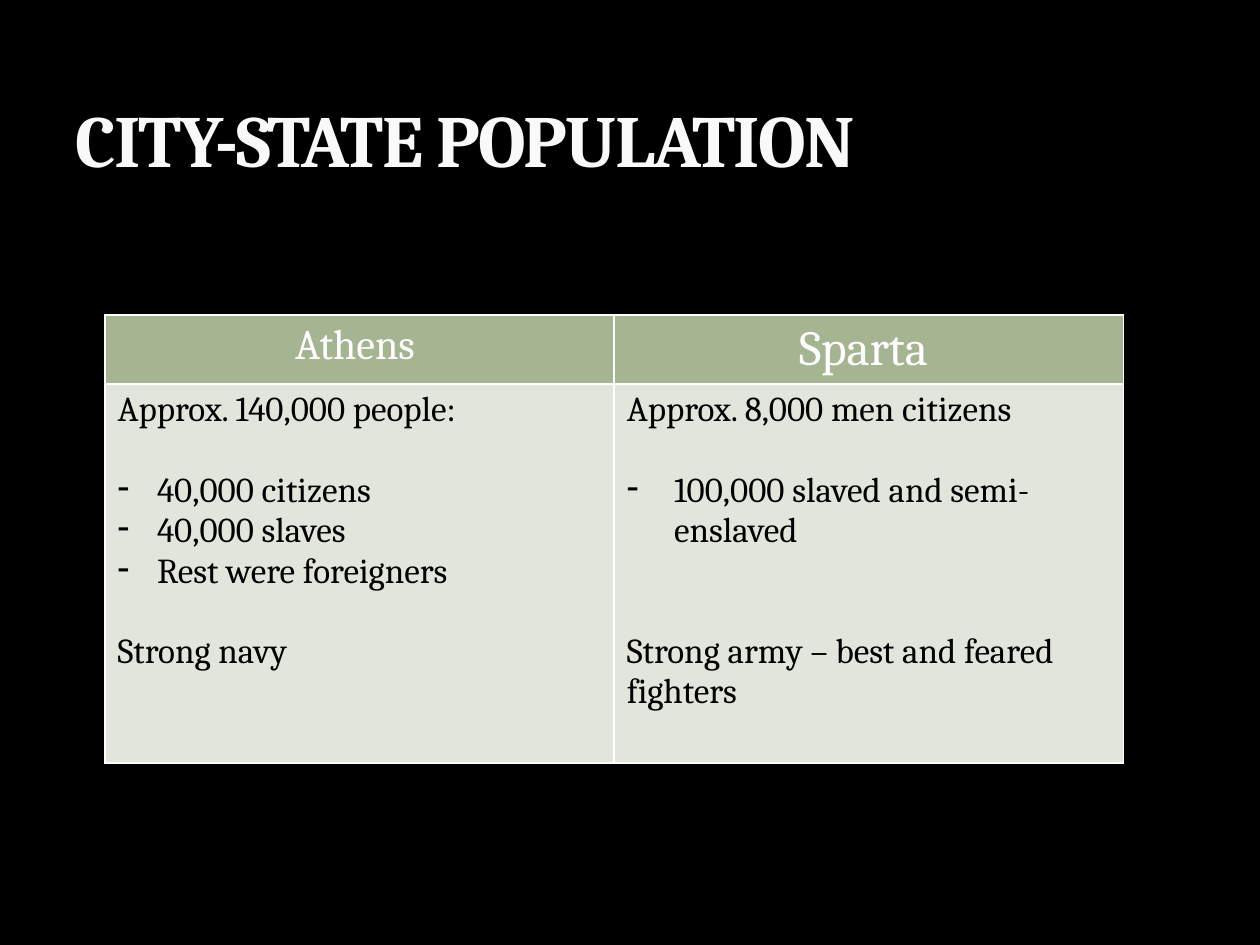
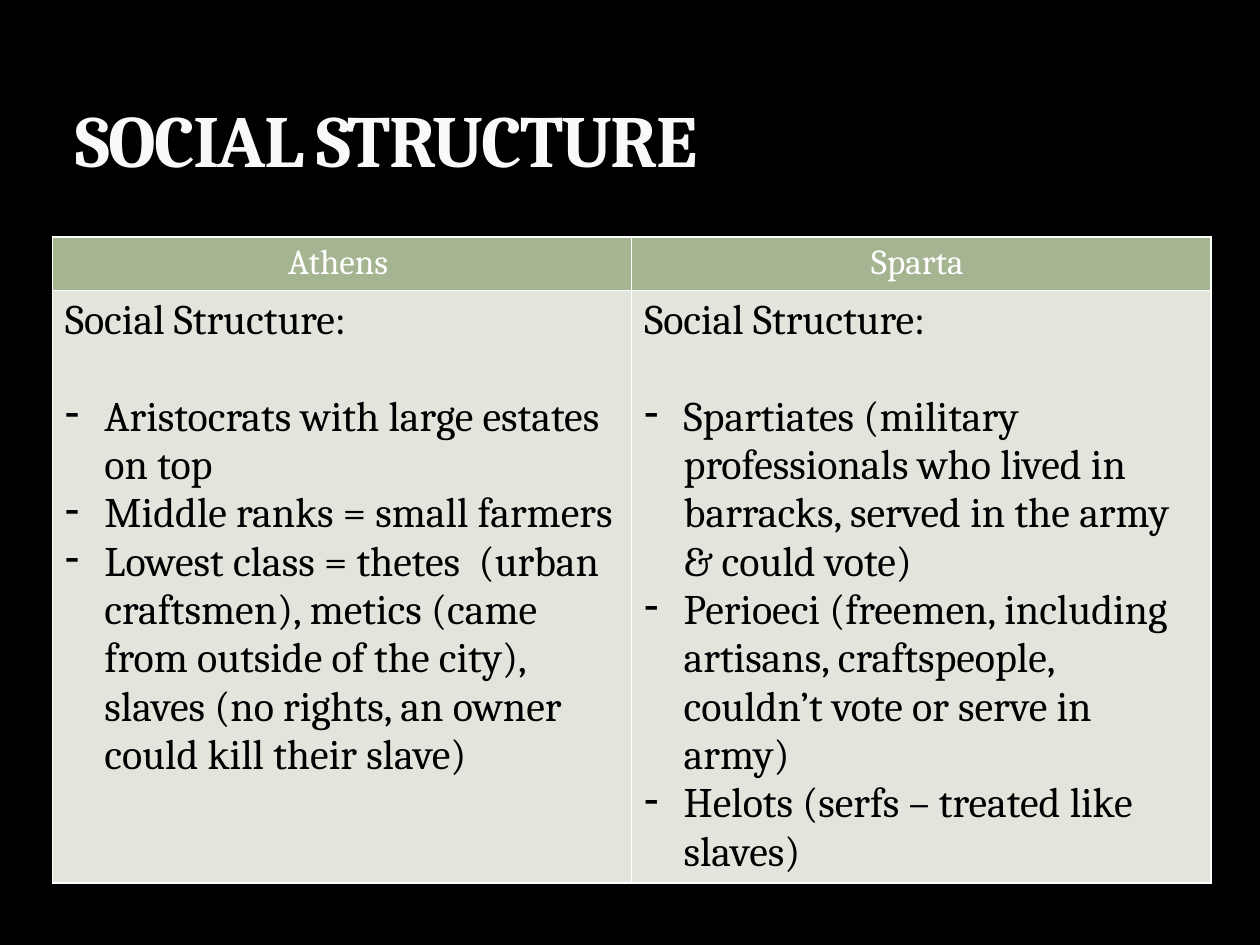
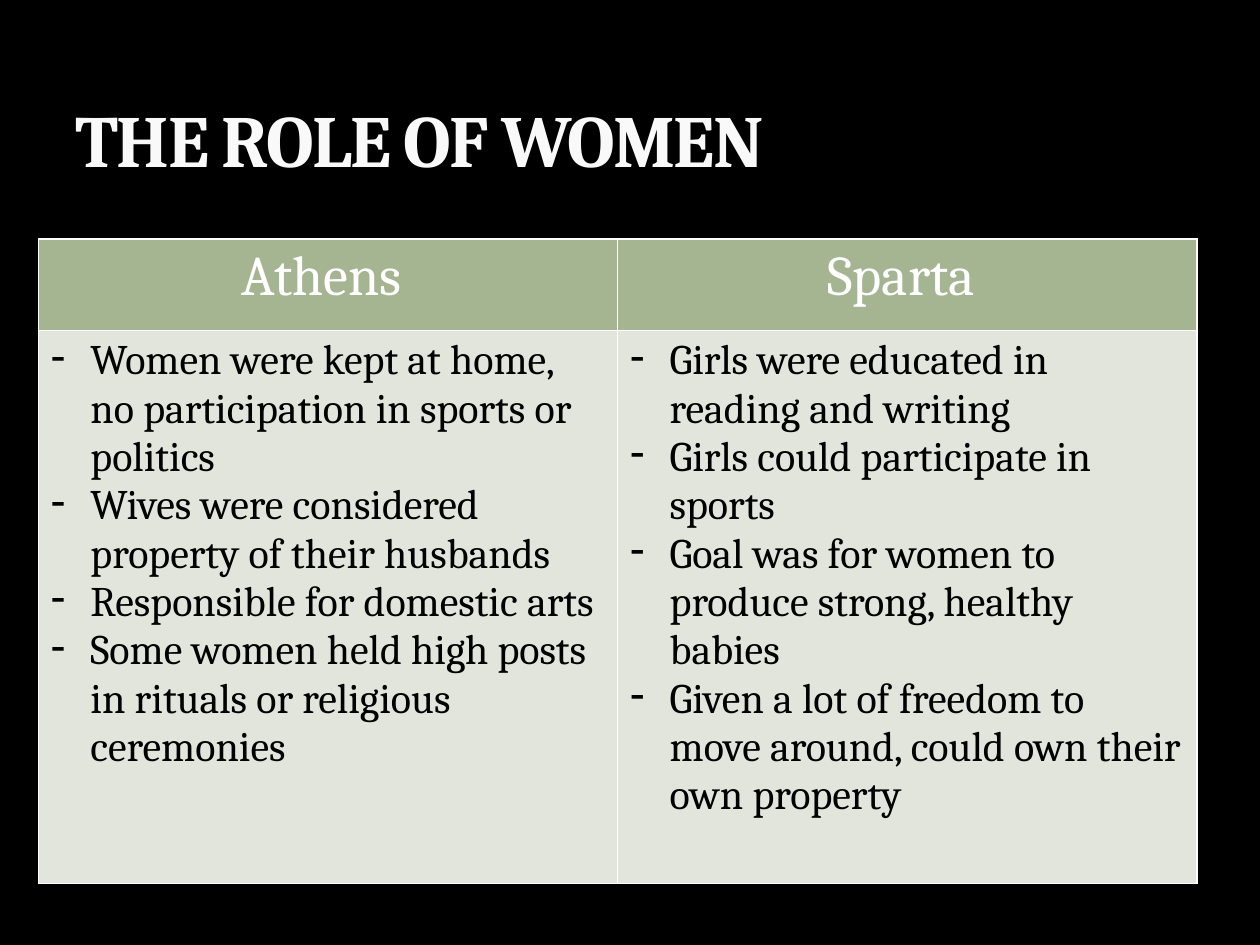
from dataclasses import dataclass

from lxml import etree
from pptx import Presentation
from pptx.dml.color import RGBColor
from pptx.enum.text import MSO_ANCHOR, MSO_AUTO_SIZE, PP_ALIGN
from pptx.oxml.ns import qn
from pptx.util import Pt

LEFT = PP_ALIGN.LEFT
CENTER = PP_ALIGN.CENTER
BOTTOM = MSO_ANCHOR.BOTTOM
FIXED = MSO_AUTO_SIZE.NONE
TITLE_ONLY = 5


@dataclass(frozen=True)
class Theme:
    font: str = "Cambria"
    back: str = "000000"
    title: str = "F9F9F9"
    edge: str = "3C4422"
    head: str = "A5B592"
    body: str = "E1E5DC"
    light: str = "FFFFFF"
    dark: str = "000000"
    title_size: int = 42
    small: int = 20
    mid: int = 24
    large: int = 28
    huge: int = 32
    leading: float = 1.15


@dataclass(frozen=True)
class Line:
    text: str
    indent: float = 0
    gap: int = 0


def bullet(text, gap=0, indent=22.5):
    return Line(text, indent, gap)


def add_line(parent, tag, width, color, alpha=100):
    line = etree.SubElement(parent, qn(tag), w=str(Pt(width)))
    fill = etree.SubElement(line, qn("a:solidFill"))
    tint = etree.SubElement(fill, qn("a:srgbClr"), val=color)
    if alpha < 100:
        etree.SubElement(tint, qn("a:alpha"), val=str(alpha * 1000))
    return line


class Deck:
    def __init__(self, theme):
        self.theme = theme
        self.show = Presentation()
        self.show.slide_width = Pt(720)
        self.show.slide_height = Pt(540)
        fill = self.show.slide_master.background.fill
        fill.solid()
        fill.fore_color.rgb = RGBColor.from_string(theme.back)
        self.slide = None

    def style(self, par, size, color, bold=False):
        for run in par.runs:
            run.font.name = self.theme.font
            run.font.size = Pt(size)
            run.font.bold = bold
            run.font.color.rgb = RGBColor.from_string(color)

    def page(self, title):
        theme = self.theme
        layout = self.show.slide_layouts[TITLE_ONLY]
        self.slide = self.show.slides.add_slide(layout)
        box = self.slide.shapes.title
        box.left, box.top, box.width, box.height = Pt(36), Pt(12), Pt(648), Pt(96)
        frame = box.text_frame
        frame.text = title
        frame.vertical_anchor = BOTTOM
        frame.auto_size = FIXED
        par = frame.paragraphs[0]
        par.alignment = LEFT
        self.style(par, theme.title_size, theme.title, True)
        props = par.runs[0].font._element
        props.set("spc", "-100")
        props.insert(0, add_line(props, "a:ln", 0.25, theme.edge, 25))

    def paint(self, cell, color):
        props = cell._tc.get_or_add_tcPr()
        for side in "LRTB":
            add_line(props, f"a:ln{side}", 1, self.theme.light)
        cell.fill.solid()
        cell.fill.fore_color.rgb = RGBColor.from_string(color)

    def header(self, cell, text, size):
        self.paint(cell, self.theme.head)
        cell.text_frame.text = text
        par = cell.text_frame.paragraphs[0]
        par.alignment = CENTER
        self.style(par, size, self.theme.light)

    def listing(self, cell, lines, size):
        self.paint(cell, self.theme.body)
        frame = cell.text_frame
        frame.text = "\n".join(line.text for line in lines)
        for par, line in zip(frame.paragraphs, lines):
            self.style(par, size, self.theme.dark)
            if line.indent:
                props = par._p.get_or_add_pPr()
                props.set("marL", str(Pt(line.indent)))
                props.set("indent", str(-Pt(line.indent)))
                etree.SubElement(props, qn("a:buChar"), char="-")
            par.space_before = Pt(line.gap * size * self.theme.leading)

    def compare(self, spot, width, rows, heads, lists, size):
        left, top = spot
        frame = self.slide.shapes.add_table(
            2, 2, Pt(left), Pt(top), Pt(2 * width), Pt(sum(rows)))
        table = frame.table
        table.first_row = False
        table.horz_banding = False
        for row, height in zip(table.rows, rows):
            row.height = Pt(height)
        names = ("Athens ", "Sparta ")
        for col, (name, head, lines) in enumerate(zip(names, heads, lists)):
            table.columns[col].width = Pt(width)
            self.header(table.cell(0, col), name, head)
            self.listing(table.cell(1, col), lines, size)


def main():
    theme = Theme()
    deck = Deck(theme)

    deck.page("CITY-STATE POPULATION")
    athens = [
        Line("Approx. 140,000 people:"),
        bullet("40,000 citizens", gap=1),
        bullet("40,000 slaves"),
        bullet("Rest were foreigners"),
        Line("Strong navy", gap=1),
    ]
    sparta = [
        Line("Approx. 8,000 men citizens"),
        bullet("100,000 slaved and semi-enslaved", gap=1, indent=27),
        Line("Strong army – best and feared fighters", gap=2),
    ]
    deck.compare((60, 180), 291, (39.5, 216.5), (theme.mid, theme.large),
                 (athens, sparta), theme.small)

    deck.page("SOCIAL STRUCTURE")
    athens = [
        Line("Social Structure:"),
        bullet("Aristocrats with large estates on top", gap=1),
        bullet("Middle ranks = small farmers"),
        bullet("Lowest class = thetes  (urban craftsmen), metics (came from "
               "outside of the city), slaves (no rights, an owner could kill "
               "their slave)"),
    ]
    sparta = [
        Line("Social Structure:"),
        bullet("Spartiates (military professionals who lived in barracks, "
               "served in the army & could vote)", gap=1),
        bullet("Perioeci (freemen, including artisans, craftspeople, "
               "couldn’t vote or serve in army)"),
        bullet("Helots (serfs – treated like slaves)"),
    ]
    deck.compare((30, 135.5), 331, (30.5, 338), (theme.small, theme.small),
                 (athens, sparta), theme.mid)

    deck.page("THE ROLE OF WOMEN")
    athens = [
        bullet("Women were kept at home, no participation in sports or politics"),
        bullet("Wives were considered property of their husbands"),
        bullet("Responsible for domestic arts"),
        bullet("Some women held high posts in rituals or religious ceremonies"),
    ]
    sparta = [
        bullet("Girls were educated in reading and writing"),
        bullet("Girls could participate in sports"),
        bullet("Goal was for women to produce strong, healthy babies"),
        bullet("Given a lot of freedom to move around, could own their own "
               "property"),
    ]
    deck.compare((22, 136.5), 331, (52.5, 316), (theme.huge, theme.huge),
                 (athens, sparta), theme.mid)

    deck.show.save("out.pptx")


if __name__ == "__main__":
    main()
